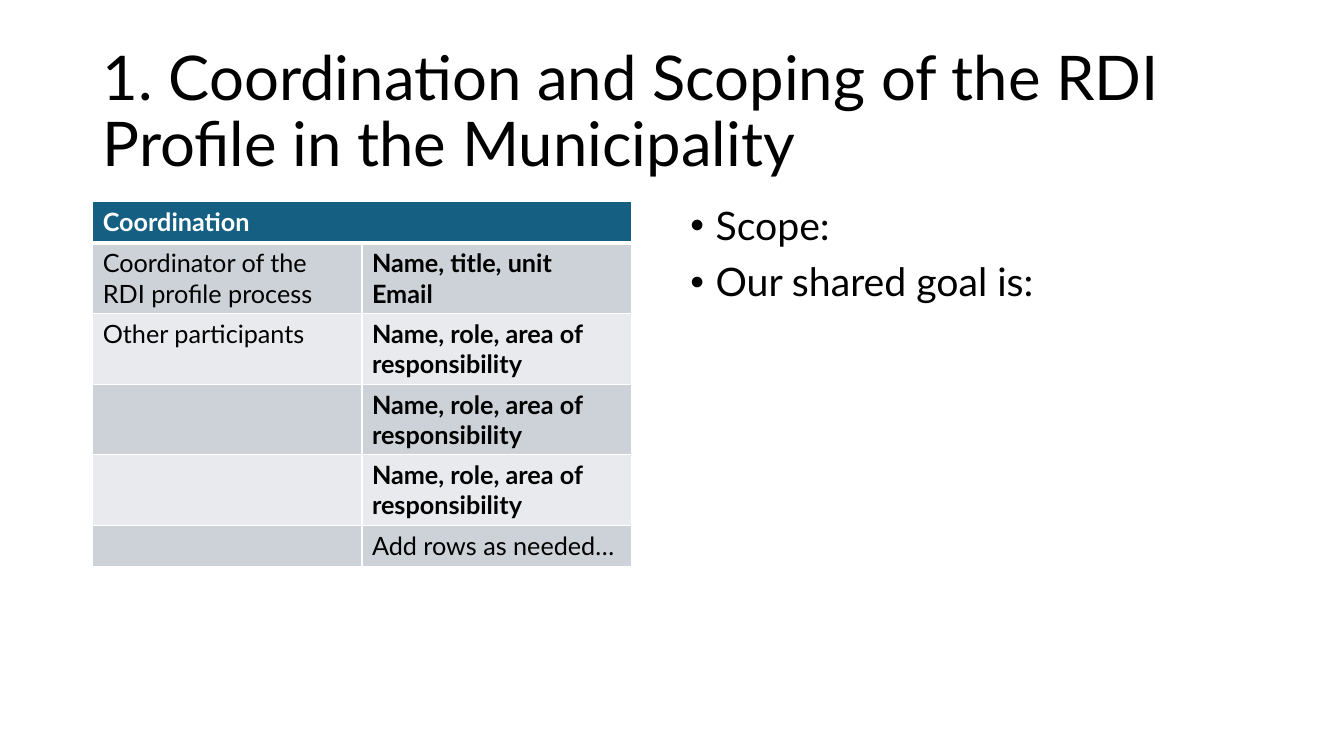
from lxml import etree
from pptx import Presentation
from pptx import util as u
from pptx.dml.color import RGBColor
from pptx.enum import text
from pptx.oxml import ns

PX = 9144  # EMU in one px, 100 px to the inch
FONT = "Lato"
BLACK = RGBColor(0x00, 0x00, 0x00)
WHITE = RGBColor(0xFF, 0xFF, 0xFF)
HEADER_BLUE = RGBColor(0x15, 0x60, 0x82)
BAND_DARK = RGBColor(0xCC, 0xD2, 0xD8)
BAND_LIGHT = RGBColor(0xE8, 0xEA, 0xED)

TITLE = "1. Coordination and Scoping of the RDI Profile in the Municipality"
GOALS = ["Scope:", "Our shared goal is:"]
PARTICIPANT = "Name, role, area of responsibility"
# Label, details, bold details, row height
ROWS = [
    ("Coordinator of the RDI profile process", ["Name, title, unit", "Email"], True, 70),
    ("Other participants", [PARTICIPANT], True, 70),
    ("", [PARTICIPANT], True, 70),
    ("", [PARTICIPANT], True, 70),
    ("", ["Add rows as needed…"], False, 41),
]
HEADER_HEIGHT = 41


def px(*lengths):
    return [u.Emu(length * PX) for length in lengths]


def add_bullet(paragraph, indent):
    properties = paragraph._p.get_or_add_pPr()
    properties.set("marL", str(indent * PX))
    properties.set("indent", str(-indent * PX))
    etree.SubElement(properties, ns.qn("a:buFont")).set("typeface", "Arial")
    etree.SubElement(properties, ns.qn("a:buChar")).set("char", "•")


def write(frame, lines, size=18, bold=False, color=BLACK, spacing=None, gap=0, bullet_indent=0):
    """Write one paragraph per line into a text frame."""
    frame.word_wrap = True
    for number, line in enumerate(lines):
        paragraph = frame.add_paragraph() if number else frame.paragraphs[0]
        if bullet_indent:
            add_bullet(paragraph, bullet_indent)
        if spacing:
            paragraph.line_spacing = spacing
        if number and gap:
            paragraph.space_before = u.Pt(gap)
        run = paragraph.add_run()
        run.text = line
        run.font.name = FONT
        run.font.size = u.Pt(size)
        run.font.bold = bold
        run.font.color.rgb = color


def set_borders(cell, top=1, bottom=1):
    properties = cell._tc.get_or_add_tcPr()
    widths = {"lnL": 1, "lnR": 1, "lnT": top, "lnB": bottom}
    for position, (side, width) in enumerate(widths.items()):
        line = etree.Element(ns.qn(f"a:{side}"), w=str(u.Pt(width)))
        fill = etree.SubElement(line, ns.qn("a:solidFill"))
        etree.SubElement(fill, ns.qn("a:srgbClr")).set("val", str(WHITE))
        properties.insert(position, line)


def style_cell(cell, fill, **borders):
    cell.fill.solid()
    cell.fill.fore_color.rgb = fill
    set_borders(cell, **borders)


def add_title(slide, left, top, width, height):
    frame = slide.shapes.add_textbox(*px(left, top, width, height)).text_frame
    frame.vertical_anchor = text.MSO_ANCHOR.MIDDLE
    write(frame, [TITLE], size=44, spacing=0.9)


def add_coordination_table(slide, left, top, width):
    heights = [HEADER_HEIGHT] + [row[-1] for row in ROWS]
    box = px(left, top, width, sum(heights))
    table = slide.shapes.add_table(len(heights), 2, *box).table
    for row, height in zip(table.rows, heights):
        row.height = u.Emu(height * PX)

    # Header across both columns
    for column in range(2):
        style_cell(table.cell(0, column), HEADER_BLUE, bottom=3)
    table.cell(0, 0).merge(table.cell(0, 1))
    write(table.cell(0, 0).text_frame, ["Coordination"], bold=True, color=WHITE)

    # Banded rows
    for number, (label, details, bold, _) in enumerate(ROWS, start=1):
        label_cell, detail_cell = table.cell(number, 0), table.cell(number, 1)
        for cell in (label_cell, detail_cell):
            style_cell(cell, BAND_DARK if number % 2 else BAND_LIGHT, top=3 if number == 1 else 1)
        if label:
            write(label_cell.text_frame, [label])
        write(detail_cell.text_frame, details, bold=bold)


def add_goals(slide, left, top, width, height):
    frame = slide.shapes.add_textbox(*px(left, top, width, height)).text_frame
    write(frame, GOALS, size=28, spacing=0.9, gap=10, bullet_indent=25)


def main():
    presentation = Presentation()
    presentation.slide_width, presentation.slide_height = px(1333, 750)
    slide = presentation.slides.add_slide(presentation.slide_layouts[6])
    add_title(slide, 92, 40, 1150, 145)
    add_coordination_table(slide, 92, 200, 534)
    add_goals(slide, 675, 200, 567, 476)
    presentation.save("out.pptx")


if __name__ == "__main__":
    main()
